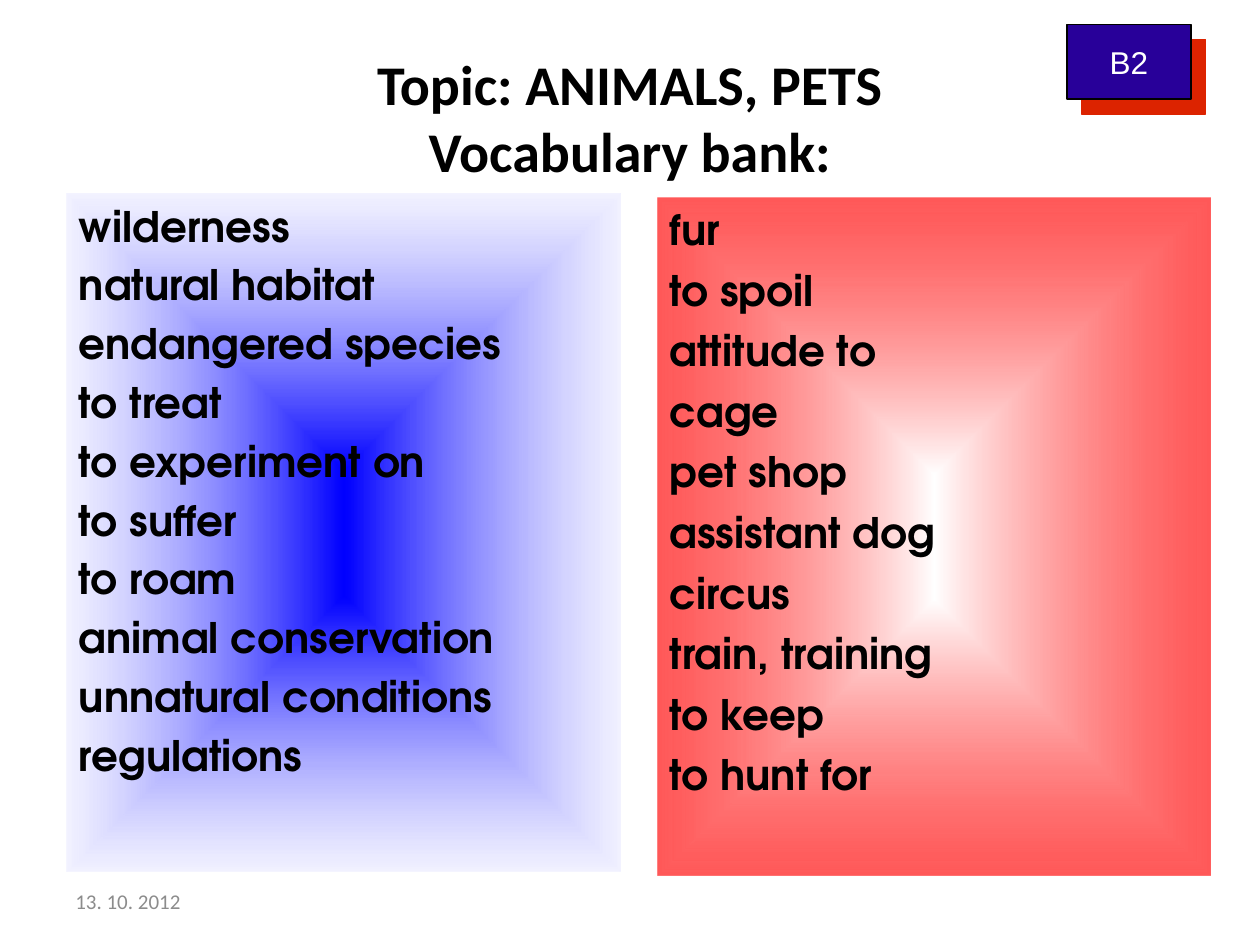
from dataclasses import dataclass

from lxml import etree
from pptx import Presentation
from pptx import util as u
from pptx.dml.color import RGBColor
from pptx.enum import shapes, text
from pptx.oxml import ns


@dataclass(frozen=True)
class Theme:
    black: str = "000000"
    white: str = "FFFFFF"
    grey: str = "8C8C8C"
    badge: str = "280099"
    badge_shadow: str = "DC2300"
    blue: str = "0000FF"
    pale_blue: str = "E6E6FF"
    red: str = "FF0000"
    title_font: str = "Calibri"
    word_font: str = "TeX Gyre Adventor"
    badge_font: str = "Arial"
    title_size: int = 32
    word_size: int = 24
    badge_size: int = 18
    date_size: int = 12


THEME = Theme()
LEFT_WORDS = ["wilderness", "natural habitat", "endangered species", "to treat",
              "to experiment on", "to suffer", "to roam", "animal conservation",
              "unnatural conditions", "regulations"]
RIGHT_WORDS = ["fur", "to spoil", "attitude to", "cage", "pet shop",
               "assistant dog", "circus", "train, training", "to keep",
               "to hunt for"]


def cm_box(*lengths):
    return [u.Cm(n) for n in lengths]


def write(s, words, font, size, color, bold=False, align=text.PP_ALIGN.LEFT,
          anchor=text.MSO_ANCHOR.MIDDLE, wrap=True, before=0):
    tf = s.text_frame
    tf.text = words
    tf.word_wrap = wrap
    tf.vertical_anchor = anchor
    for p in tf.paragraphs:
        p.alignment = align
        p.space_before = u.Pt(before)
        for r in p.runs:
            r.font.name = font
            r.font.size = u.Pt(size)
            r.font.bold = bold
            r.font.color.rgb = RGBColor.from_string(color)


def add_box(slide, box):
    s = slide.shapes.add_shape(shapes.MSO_SHAPE.RECTANGLE, *box)
    s.shadow.inherit = False
    return s


def color_xml(color, alpha=100):
    return f'<a:srgbClr val="{color}"><a:alpha val="{alpha * 1000}"/></a:srgbClr>'


def fill_from_centre(s, inner, outer, outer_alpha):
    """Rectangular gradient that spreads from the middle to the edges."""
    s.fill.background()
    no_fill = s._element.spPr.find(ns.qn("a:noFill"))
    grad = etree.fromstring(
        f'<a:gradFill {ns.nsdecls("a")} rotWithShape="1"><a:gsLst>'
        f'<a:gs pos="0">{color_xml(inner)}</a:gs>'
        f'<a:gs pos="100000">{color_xml(outer, outer_alpha)}</a:gs></a:gsLst>'
        '<a:path path="rect">'
        '<a:fillToRect l="50000" t="50000" r="50000" b="50000"/>'
        '</a:path></a:gradFill>')
    no_fill.getparent().replace(no_fill, grad)


def add_label(slide, box, words, size, color, **style):
    s = slide.shapes.add_textbox(*box)
    write(s, words, THEME.title_font, size, color, **style)


def add_word_panel(slide, box, words, inner, outer, outer_alpha, before):
    s = add_box(slide, box)
    s.line.fill.background()
    fill_from_centre(s, inner, outer, outer_alpha)
    write(s, "\n".join(words), THEME.word_font, THEME.word_size, THEME.black,
          bold=True, anchor=text.MSO_ANCHOR.TOP, before=before)


def add_badge(slide, box, words):
    s = add_box(slide, box)
    s.fill.solid()
    s.fill.fore_color.rgb = RGBColor.from_string(THEME.badge)
    s.line.color.rgb = RGBColor.from_string(THEME.black)
    s.line.width = u.Pt(0.75)
    # Hard shadow, 12 pt down to the right
    effects = s._element.spPr.find(ns.qn("a:effectLst"))
    effects.append(etree.fromstring(
        f'<a:outerShdw {ns.nsdecls("a")} blurRad="0" dist="{u.Pt(12)}" '
        f'dir="2700000" algn="tl" rotWithShape="0">'
        f'{color_xml(THEME.badge_shadow)}</a:outerShdw>'))
    write(s, words, THEME.badge_font, THEME.badge_size, THEME.white,
          align=text.PP_ALIGN.CENTER, wrap=False)


def main():
    prs = Presentation()
    prs.slide_width, prs.slide_height = u.Cm(25.4), u.Cm(19.05)
    slide = prs.slides.add_slide(prs.slide_layouts[6])

    # Date and title
    add_label(slide, cm_box(1.27, 17.65, 5.92, 1.02), "13. 10. 2012",
              THEME.date_size, THEME.grey)
    add_label(slide, cm_box(1.27, 0.64, 22.86, 3.43),
              "Topic: ANIMALS, PETS\vVocabulary bank:", THEME.title_size,
              THEME.black, bold=True, align=text.PP_ALIGN.CENTER)

    # Vocabulary panels
    add_word_panel(slide, cm_box(1.34, 3.91, 11.16, 13.67), LEFT_WORDS,
                   THEME.blue, THEME.pale_blue, 50, before=4.8)
    add_word_panel(slide, cm_box(13.25, 3.98, 11.16, 13.67), RIGHT_WORDS,
                   THEME.white, THEME.red, 65, before=5.8)

    # Level badge
    add_badge(slide, cm_box(21.51, 0.5, 2.5, 1.5), "B2")

    prs.save("out.pptx")


if __name__ == "__main__":
    main()
